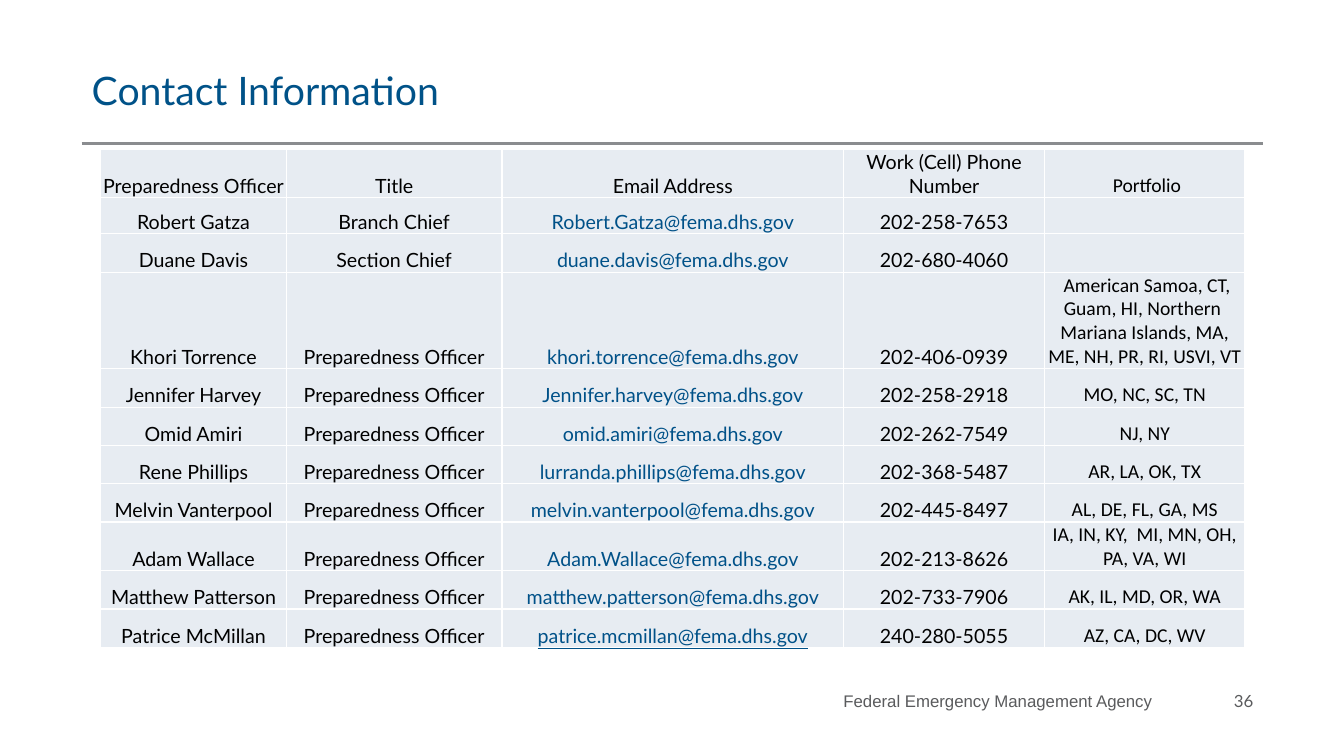
import pptx
import pptx.util
from lxml import etree
from pptx.dml.color import RGBColor
from pptx.enum.text import MSO_ANCHOR, MSO_AUTO_SIZE, PP_ALIGN
from pptx.oxml.ns import qn

PX = 9144  # EMU, 100 px to the inch

TITLE_BLUE = RGBColor(0x00, 0x52, 0x88)
LINK_BLUE = RGBColor(0x00, 0x51, 0x88)
FOOTER_GRAY = RGBColor(0x5A, 0x5B, 0x5D)
RULE_GRAY = RGBColor(0x8A, 0x8C, 0x8F)
CELL_FILL = RGBColor(0xE7, 0xEC, 0xF2)
BLACK = RGBColor(0x00, 0x00, 0x00)
WHITE = RGBColor(0xFF, 0xFF, 0xFF)

COLUMN_WIDTHS = [184, 214, 339, 199, 199]
ROW_HEIGHTS = [48, 36, 38, 96, 38, 38, 38, 38, 48, 38, 38]
EMAIL_COLUMN, PORTFOLIO_COLUMN = 2, 4
HEADINGS = ("Preparedness Officer", "Title", "Email Address",
            "Work (Cell) Phone Number", " Portfolio")
OFFICER = "Preparedness Officer"
CONTACTS = [
    ("Robert Gatza", "Branch Chief", "Robert.Gatza", "202-258-7653", ""),
    ("Duane Davis", "Section Chief", "duane.davis", "202-680-4060", ""),
    ("Khori Torrence", OFFICER, "khori.torrence", "202-406-0939",
     " American Samoa, CT, Guam, HI, Northern  Mariana Islands, MA, ME, NH, PR, RI, USVI, VT"),
    ("Jennifer Harvey", OFFICER, "Jennifer.harvey", "202-258-2918", "MO, NC, SC, TN"),
    ("Omid Amiri", OFFICER, "omid.amiri", "202-262-7549", "NJ, NY"),
    ("Rene Phillips", OFFICER, "lurranda.phillips", "202-368-5487", "AR, LA, OK, TX"),
    ("Melvin Vanterpool", OFFICER, "melvin.vanterpool", "202-445-8497", "AL, DE, FL, GA, MS"),
    ("Adam Wallace", OFFICER, "Adam.Wallace", "202-213-8626",
     "IA, IN, KY,  MI, MN, OH, PA, VA, WI"),
    ("Matthew Patterson", OFFICER, "matthew.patterson", "202-733-7906", "AK, IL, MD, OR, WA"),
    ("Patrice McMillan", OFFICER, "patrice.mcmillan", "240-280-5055", "AZ, CA, DC, WV"),
]


def set_formats(target, formats):
    for attribute, value in formats.items():
        setattr(target, attribute, value)


def emu(box):
    return [length * PX for length in box]


def write(paragraph, text, size, font_name, color, align, underline=None):
    paragraph.alignment = align
    run = paragraph.add_run()
    run.text = text
    set_formats(run.font, {"size": pptx.util.Pt(size), "name": font_name, "underline": underline})
    run.font.color.rgb = color


def fill_title(slide, box):
    title = slide.shapes.title
    set_formats(title, dict(zip(("left", "top", "width", "height"), emu(box))))
    set_formats(title.text_frame, {"auto_size": MSO_AUTO_SIZE.NONE, "word_wrap": True,
                                   "vertical_anchor": MSO_ANCHOR.MIDDLE})
    write(title.text_frame.paragraphs[0], "Contact Information", 28, "Lato",
          TITLE_BLUE, PP_ALIGN.LEFT)


def add_title_rule(slide, left, top, width):
    rule = slide.shapes.add_connector(pptx.enum.shapes.MSO_CONNECTOR.STRAIGHT,
                                      *emu((left, top, left + width, top)))
    rule.line.color.rgb = RULE_GRAY
    rule.line.width = pptx.util.Pt(2)
    etree.SubElement(rule._element.spPr, qn("a:effectLst"))


def add_footer_text(slide, box, text, font_name):
    frame = slide.shapes.add_textbox(*emu(box)).text_frame
    set_formats(frame, {"word_wrap": True, "vertical_anchor": MSO_ANCHOR.MIDDLE})
    write(frame.paragraphs[0], text, 12, font_name, FOOTER_GRAY, PP_ALIGN.RIGHT)


def add_footer(slide, left, top, width, height):
    number_width = 100
    agency_width = width - number_width
    add_footer_text(slide, (left, top, agency_width, height),
                    "Federal Emergency Management Agency", "Arial")
    add_footer_text(slide, (left + agency_width, top, number_width, height), "36", "Lato")


def format_cell(cell):
    set_formats(cell, {"margin_left": PX, "margin_right": PX, "margin_top": PX,
                       "margin_bottom": 0, "vertical_anchor": MSO_ANCHOR.BOTTOM})
    properties = cell._tc.get_or_add_tcPr()
    for side in ("a:lnL", "a:lnR", "a:lnT", "a:lnB"):
        border = etree.SubElement(properties, qn(side), w=str(pptx.util.Pt(1)))
        paint = etree.SubElement(border, qn("a:solidFill"))
        etree.SubElement(paint, qn("a:srgbClr"), val=str(WHITE))
    cell.fill.solid()
    cell.fill.fore_color.rgb = CELL_FILL


def add_contact_table(slide, left, top):
    entries = [HEADINGS] + [(name, role, f"{mailbox}@fema.dhs.gov", phone, portfolio)
                            for name, role, mailbox, phone, portfolio in CONTACTS]
    box = (left, top, sum(COLUMN_WIDTHS), sum(ROW_HEIGHTS))
    contacts = slide.shapes.add_table(len(entries), len(COLUMN_WIDTHS), *emu(box)).table
    set_formats(contacts, {"first_row": False, "horz_banding": False})
    for column, width in zip(contacts.columns, COLUMN_WIDTHS):
        column.width = width * PX
    for row, height in zip(contacts.rows, ROW_HEIGHTS):
        row.height = height * PX
    for row_index, entry in enumerate(entries):
        for column_index, text in enumerate(entry):
            cell = contacts.cell(row_index, column_index)
            format_cell(cell)
            if text:
                is_link = row_index > 0 and column_index == EMAIL_COLUMN
                write(cell.text_frame.paragraphs[0], text, 14,
                      "Calibri" if column_index == PORTFOLIO_COLUMN else "Lato",
                      LINK_BLUE if is_link else BLACK, PP_ALIGN.CENTER, is_link)


def build_contact_slide(deck):
    slide = deck.slides.add_slide(deck.slide_layouts[5])
    left, width = 81, 1172
    add_title_rule(slide, left, 142, width)
    fill_title(slide, (left, 49, width, 81))
    add_contact_table(slide, 100, 148)
    add_footer(slide, 667, 675, 586, 40)


def main():
    deck = pptx.Presentation()
    set_formats(deck, {"slide_width": 1333 * PX, "slide_height": 750 * PX})
    build_contact_slide(deck)
    deck.save("out.pptx")


if __name__ == "__main__":
    main()
